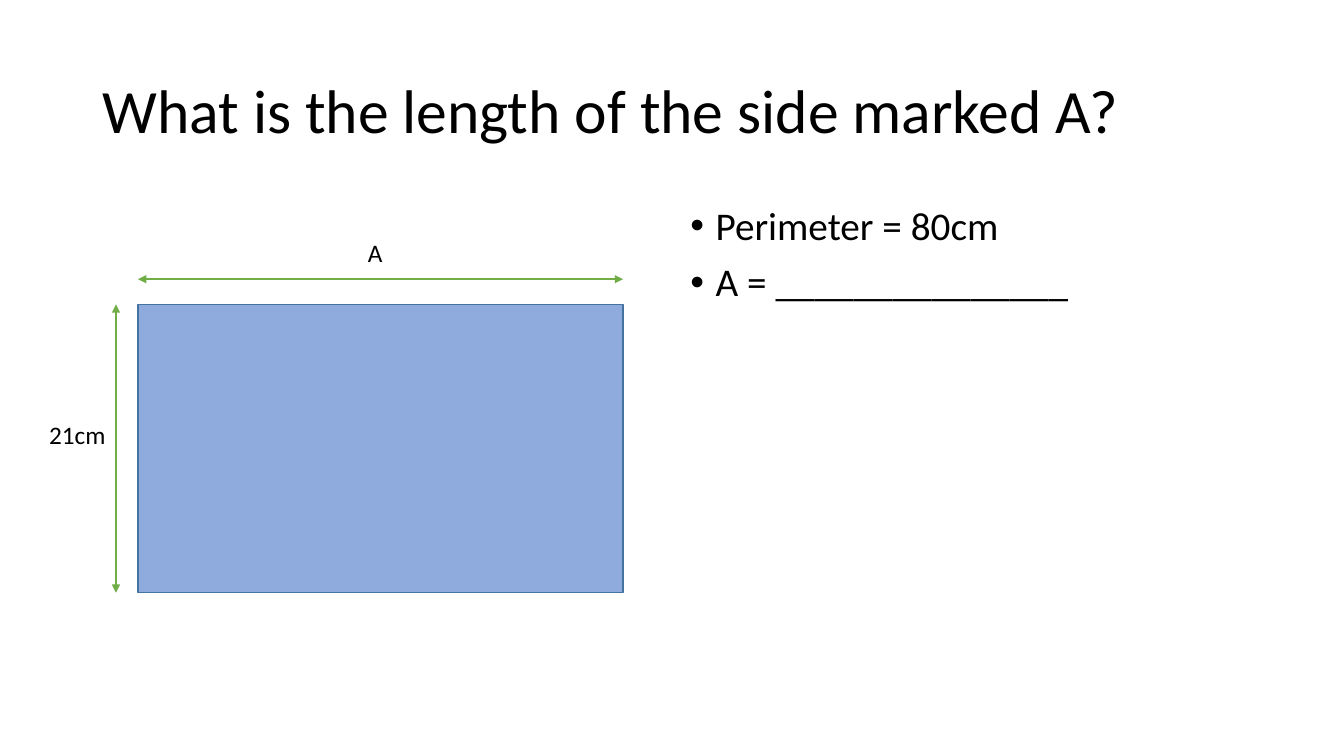
from dataclasses import dataclass

from lxml.etree import SubElement
from pptx import Presentation
from pptx.dml.color import RGBColor
from pptx.enum.shapes import MSO_CONNECTOR, MSO_SHAPE
from pptx.enum.text import MSO_ANCHOR
from pptx.oxml.ns import qn
from pptx.util import Inches, Pt


@dataclass(frozen=True)
class Theme:
    font: str = "Calibri"
    ink: RGBColor = RGBColor(0x00, 0x00, 0x00)
    fill: RGBColor = RGBColor(0x8F, 0xAA, 0xDC)
    edge: RGBColor = RGBColor(0x43, 0x73, 0x9E)
    arrow: RGBColor = RGBColor(0x70, 0xAD, 0x47)
    title: int = 44
    body: int = 28
    label: int = 18


class Page:
    def __init__(self, slide, theme):
        self.shapes = slide.shapes
        self.theme = theme

    def text(self, box, lines, size, wrap=True, anchor=MSO_ANCHOR.TOP,
             leading=None, bullet=False):
        frame = self.shapes.add_textbox(*map(Inches, box)).text_frame
        frame.word_wrap = wrap
        frame.vertical_anchor = anchor
        frame.text = "\n".join(lines)
        for i, para in enumerate(frame.paragraphs):
            if bullet:
                self.bullet(para)
                if i:
                    para.space_before = Pt(10)
            if leading:
                para.line_spacing = leading
            for run in para.runs:
                run.font.name = self.theme.font
                run.font.size = Pt(size)
                run.font.color.rgb = self.theme.ink

    def bullet(self, para):
        props = para._p.get_or_add_pPr()
        props.set("marL", str(Inches(0.25)))
        props.set("indent", str(Inches(-0.25)))
        SubElement(props, qn("a:buFont")).set("typeface", "Arial")
        SubElement(props, qn("a:buChar")).set("char", "•")

    def rect(self, box):
        shape = self.shapes.add_shape(MSO_SHAPE.RECTANGLE, *map(Inches, box))
        shape.shadow.inherit = False
        shape.fill.solid()
        shape.fill.fore_color.rgb = self.theme.fill
        shape.line.color.rgb = self.theme.edge
        shape.line.width = Pt(1)

    def arrow(self, *ends):
        """Draw a double-headed dimension line from x1, y1 to x2, y2."""
        link = self.shapes.add_connector(
            MSO_CONNECTOR.STRAIGHT, *map(Inches, ends))
        link.line.color.rgb = self.theme.arrow
        link.line.width = Pt(1.5)
        line = link.line._get_or_add_ln()
        for tag in ("a:headEnd", "a:tailEnd"):
            SubElement(line, qn(tag)).set("type", "triangle")
        SubElement(link._element.spPr, qn("a:effectLst"))


def main():
    deck = Presentation()
    deck.slide_width, deck.slide_height = Inches(13.33), Inches(7.5)
    theme = Theme()
    page = Page(deck.slides.add_slide(deck.slide_layouts[6]), theme)

    page.text((0.92, 0.4, 11.5, 1.45),
              ["What is the length of the side marked A?"],
              theme.title, anchor=MSO_ANCHOR.MIDDLE, leading=0.9)
    page.text((6.75, 2, 5.67, 4.76),
              ["Perimeter = 80cm", "A = _______________"],
              theme.body, leading=0.9, bullet=True)

    left, top, width, height = 1.37, 3.02, 4.81, 2.86
    page.rect((left, top, width, height))
    page.arrow(1.15, top, 1.15, top + height)
    page.text((0.39, 4.11, 0.77, 0.4), ["21cm"], theme.label, wrap=False)
    page.arrow(left, 2.77, left + width, 2.77)
    page.text((3.55, 2.31, 0.35, 0.4), ["A"], theme.label, wrap=False)

    deck.save("out.pptx")


if __name__ == "__main__":
    main()
